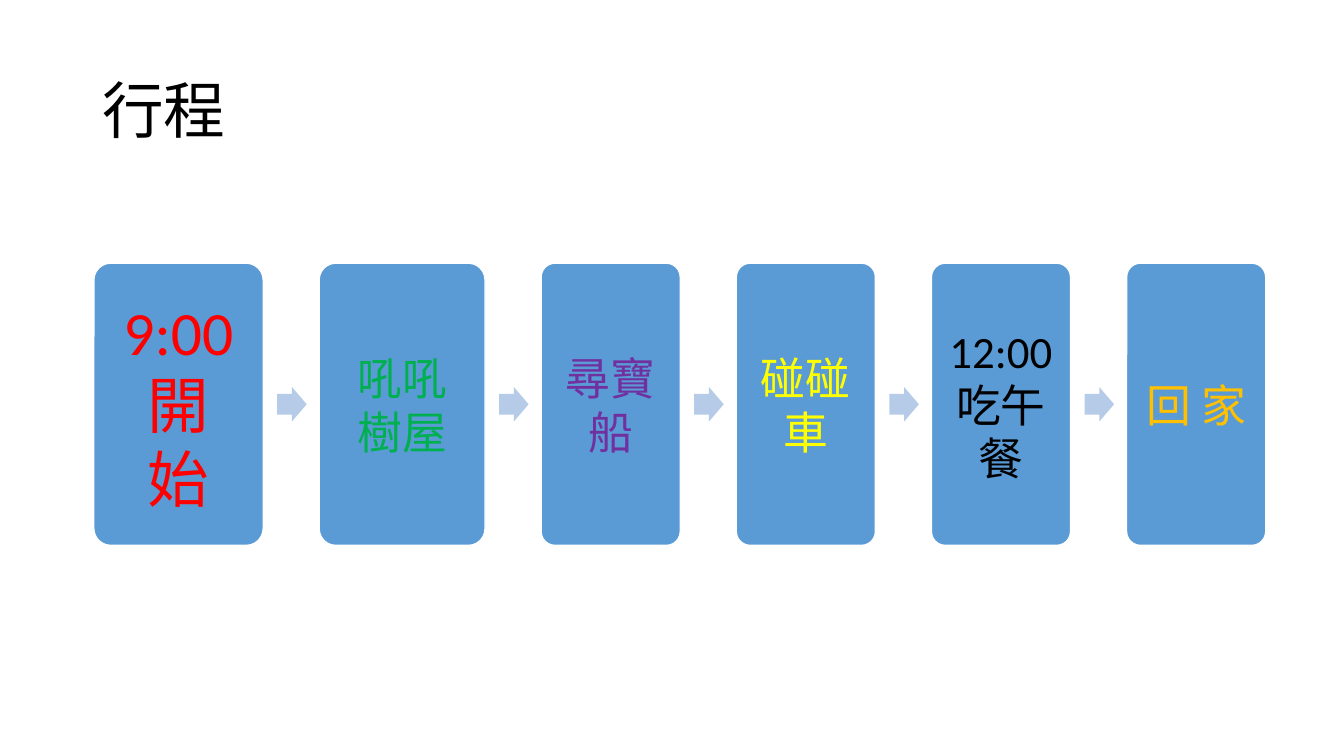
from pptx import Presentation
from pptx import util as u
from pptx.dml.color import RGBColor
from pptx.enum import shapes, text

COLORS = {
    "black": "000000", "white": "FFFFFF", "card": "5B9BD5", "arrow": "B5CBE7",
    "red": "FF0000", "green": "00B050", "purple": "7030A0",
    "yellow": "FFFF00", "orange": "FFC000",
}
STEPS = [
    ("9:00開始", "red", 44, 121, 13),
    ("吼吼樹屋", "green", 32, 118.5, 9),
    ("尋寶船", "purple", 32, 99.4, 9),
    ("碰碰車", "yellow", 32, 99.4, 9),
    ("12:00吃午餐", "black", 32, 99.4, 9),
    ("回 家", "orange", 32, 99.4, 9),
]
GAP = 40
ARROW_WIDTH, ARROW_HEIGHT = 21.1, 24.6


def color(name):
    """Return the named colour."""
    return RGBColor.from_string(COLORS[name])


def set_all(target, values):
    """Set each attribute of the target from a dict."""
    for name, value in values.items():
        setattr(target, name, value)


def write(shape, words, ink, size, frame_format, paragraph_format):
    """Put one formatted paragraph in a shape."""
    frame = shape.text_frame
    set_all(frame, {"word_wrap": True,
                    "vertical_anchor": text.MSO_ANCHOR.MIDDLE, **frame_format})
    paragraph = frame.paragraphs[0]
    set_all(paragraph, paragraph_format)
    run = paragraph.add_run()
    run.text = words
    set_all(run.font, {"name": "Calibri", "size": u.Pt(size)})
    run.font.color.rgb = color(ink)


def add_block(slide, kind, box, fill, adjustments):
    """Add a flat preset shape in the given box."""
    shape = slide.shapes.add_shape(kind, *map(u.Pt, box))
    shape.shadow.inherit = False
    shape.fill.solid()
    shape.fill.fore_color.rgb = color(fill)
    shape.line.fill.background()
    for index, value in enumerate(adjustments):
        shape.adjustments[index] = value
    return shape


def add_title(slide, box, words):
    """Add the slide heading."""
    title = slide.shapes.add_textbox(*map(u.Pt, box))
    write(title, words, "black", 44, {}, {"line_spacing": 0.9})


def add_card(slide, box, words, ink, size, inset):
    """Add one rounded step card with its label."""
    card = add_block(slide, shapes.MSO_SHAPE.ROUNDED_RECTANGLE, box, "card", [0.1])
    card.line.color.rgb = color("white")
    card.line.width = u.Pt(1)
    sides = ("left", "top", "right", "bottom")
    margins = {f"margin_{side}": u.Pt(inset) for side in sides}
    write(card, words, ink, size, margins, {"alignment": text.PP_ALIGN.CENTER})


def add_schedule(slide, left, top, height):
    """Lay the step cards in a row with an arrow in each gap."""
    for index, (words, ink, size, width, inset) in enumerate(STEPS):
        if index:
            arrow_box = (left - GAP + 10, top + (height - ARROW_HEIGHT) / 2,
                         ARROW_WIDTH, ARROW_HEIGHT)
            add_block(slide, shapes.MSO_SHAPE.RIGHT_ARROW, arrow_box, "arrow", [0.6, 0.5])
        add_card(slide, (left, top, width, height), words, ink, size, inset)
        left += width + GAP


def main():
    """Build and save the schedule slide."""
    presentation = Presentation()
    set_all(presentation, {"slide_width": u.Pt(960), "slide_height": u.Pt(540)})
    slide = presentation.slides.add_slide(presentation.slide_layouts[6])
    add_title(slide, (66, 28.75, 828, 104.4), "行程")
    add_schedule(slide, 67, 188, 201.6)
    presentation.save("out.pptx")


if __name__ == "__main__":
    main()
